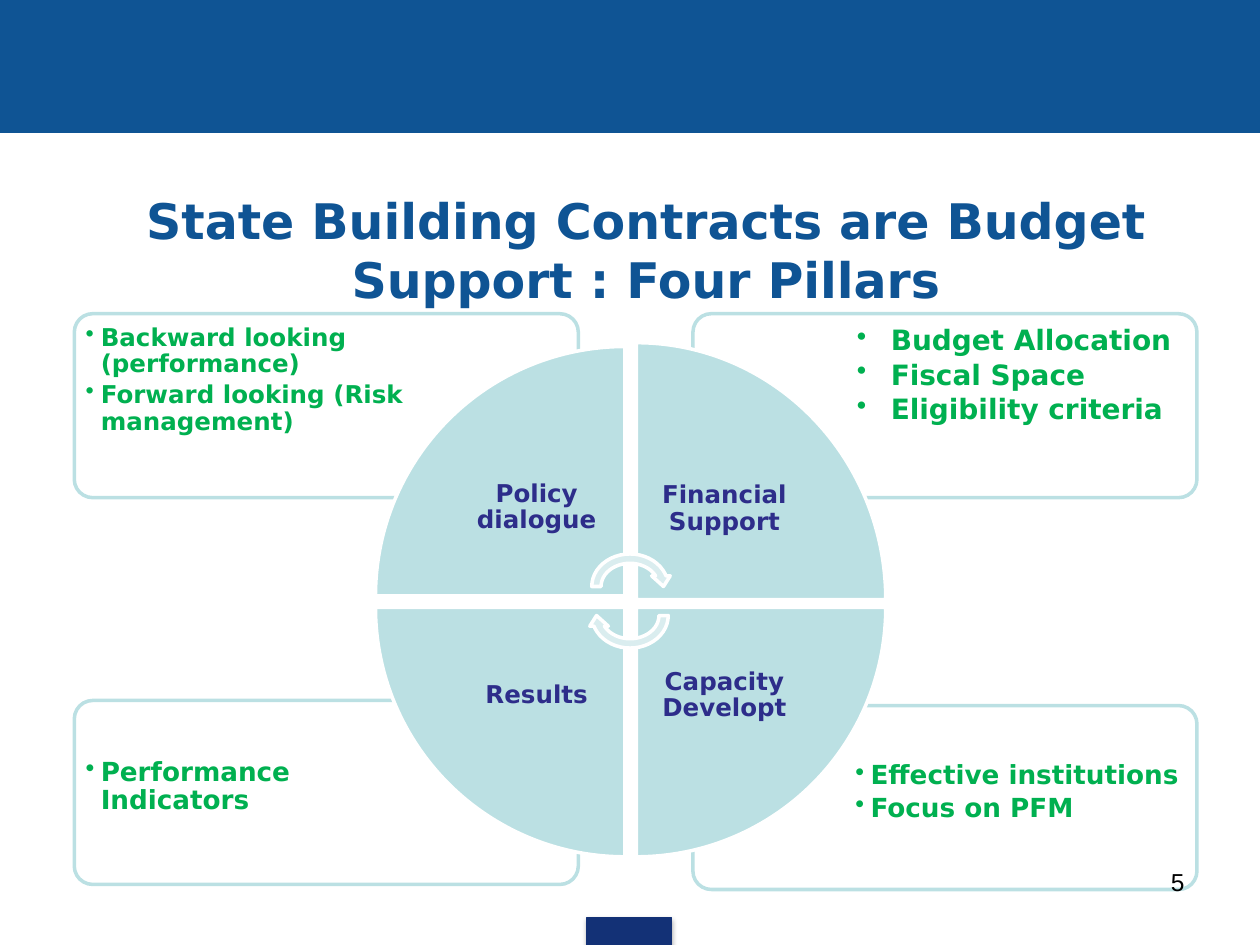
from lxml import etree
from pptx import Presentation
from pptx.dml.color import RGBColor
from pptx.enum import shapes, text
from pptx.oxml import ns
from pptx.util import Inches, Pt

BLUE, NAVY, PALE, GREEN = "0F5494", "133176", "BBE0E3", "00B050"
FONT = "DejaVu Sans"
SHAPE = shapes.MSO_SHAPE

prs = Presentation()
prs.slide_width, prs.slide_height = Inches(10), Inches(7.5)
slide = prs.slides.add_slide(prs.slide_layouts[5])


def add_box(kind, at, fill, line, width, rotation=0):
    box = slide.shapes.add_shape(kind, *(Inches(v) for v in at))
    box.shadow.inherit = False
    box.rotation = rotation
    box.fill.solid()
    box.fill.fore_color.rgb = RGBColor.from_string(fill)
    box.line.color.rgb = RGBColor.from_string(line)
    box.line.width = Pt(width)
    return box


def write(holder, lines, size, color, align, bold=True, font=FONT, inset=None,
          anchor=text.MSO_ANCHOR.TOP, hang=0, spacing=None, after=None):
    """Fill a shape with paragraphs; a hang above 0 makes them bulleted."""
    frame = holder.text_frame
    frame.word_wrap = True
    frame.auto_size = text.MSO_AUTO_SIZE.NONE
    frame.vertical_anchor = anchor
    if inset is not None:
        frame.margin_left = frame.margin_right = Inches(inset)
        frame.margin_top = frame.margin_bottom = Inches(inset)
    for i, line in enumerate(lines):
        paragraph = frame.add_paragraph() if i else frame.paragraphs[0]
        if hang:
            props = paragraph._p.get_or_add_pPr()
            props.set("marL", str(Inches(hang)))
            props.set("indent", str(-Inches(hang)))
            etree.SubElement(props, ns.qn("a:buChar")).set("char", "•")
        paragraph.alignment = align
        if spacing:
            paragraph.line_spacing = spacing
        if after:
            paragraph.space_after = Pt(after)
        run = paragraph.add_run()
        run.text = line
        run.font.size, run.font.bold, run.font.name = Pt(size), bold, font
        run.font.color.rgb = RGBColor.from_string(color)


# Header band and footer tab
add_box(SHAPE.RECTANGLE, (0, 0, 10, 1.05), BLUE, BLUE, 0.75)
footer_tab = add_box(SHAPE.RECTANGLE, (4.66, 7.28, 0.67, 0.22), NAVY, NAVY, 0.75)
effects = footer_tab._element.spPr.find(ns.qn("a:effectLst"))
shadow = etree.SubElement(effects, ns.qn("a:outerShdw"), blurRad=str(Pt(3.1)),
                          dist=str(Pt(1.8)), dir="5400000", rotWithShape="0")
shade = etree.SubElement(shadow, ns.qn("a:srgbClr"), val="000000")
etree.SubElement(shade, ns.qn("a:alpha"), val="35000")

title = slide.shapes.title
title.left, title.top = Inches(0.43), Inches(1.47)
title.width, title.height = Inches(9), Inches(1.02)
write(title, ["State Building Contracts are Budget Support : Four Pillars"], 28, BLUE,
      text.PP_ALIGN.CENTER, anchor=text.MSO_ANCHOR.MIDDLE)
title.text_frame.paragraphs[0]._p.get_or_add_pPr().set("marL", str(Inches(0.39)))

# Corner cards: card left and top, text left and top, size, hang, inset, lines
cards = [
    (5.5, 5.6, 6.73, 5.99, 15, 0.12, 0.06, ["Effective institutions", "Focus on PFM"]),
    (0.59, 5.56, 0.62, 5.96, 15, 0.12, 0.06, ["Performance Indicators"]),
    (5.5, 2.49, 6.73, 2.52, 16, 0.27, 0.07,
     ["Budget Allocation", "Fiscal Space", "Eligibility criteria"]),
    (0.59, 2.49, 0.62, 2.52, 14, 0.12, 0.06,
     ["Backward looking (performance)", "Forward looking (Risk management)"]),
]
for left, top, text_left, text_top, size, hang, inset, lines in cards:
    card = add_box(SHAPE.ROUNDED_RECTANGLE, (left, top, 4, 1.46), "FFFFFF", PALE, 2)
    card.adjustments[0] = 0.1
    white = card._element.spPr.find(ns.qn("a:solidFill"))[0]
    etree.SubElement(white, ns.qn("a:alpha"), val="90000")
    points = slide.shapes.add_textbox(Inches(text_left), Inches(text_top),
                                      Inches(2.73), Inches(1.03))
    write(points, lines, size, GREEN, text.PP_ALIGN.LEFT, inset=inset, hang=hang,
          spacing=0.9, after=2.5)

# The four pillars, clockwise from top left: wedge, label place, label
pillars = [
    ((2.98, 2.75, 1.98, 1.98), (3.56, 3.33), "Policy dialogue"),
    ((5.02, 2.75, 2.04, 1.98), (5.05, 3.34), "Financial Support"),
    ((5.05, 4.82, 1.98, 1.98), (5.05, 4.82), "Capacity Developt"),
    ((2.98, 4.82, 1.98, 1.98), (3.56, 4.82), "Results"),
]
for turn, (wedge, (left, top), pillar) in enumerate(pillars):
    add_box(SHAPE.PIE_WEDGE, wedge, PALE, "FFFFFF", 2, turn * 90)
    label = slide.shapes.add_textbox(Inches(left), Inches(top), Inches(1.4), Inches(1.4))
    write(label, [pillar], 14, "2D2D8A", text.PP_ALIGN.CENTER, inset=0.11,
          anchor=text.MSO_ANCHOR.MIDDLE, spacing=0.9, after=5)

# Cycle arrows in the centre
for top, rotation in ((4.36, 0), (4.59, 180)):
    add_box(SHAPE.CIRCULAR_ARROW, (4.66, top, 0.68, 0.59), "DAEDEF", "FFFFFF", 2, rotation)

page_number = slide.shapes.add_textbox(Inches(7.17), Inches(6.83), Inches(2.33), Inches(0.52))
write(page_number, ["5"], 14, "000000", text.PP_ALIGN.RIGHT, bold=False, font="Arial")

prs.save("out.pptx")
